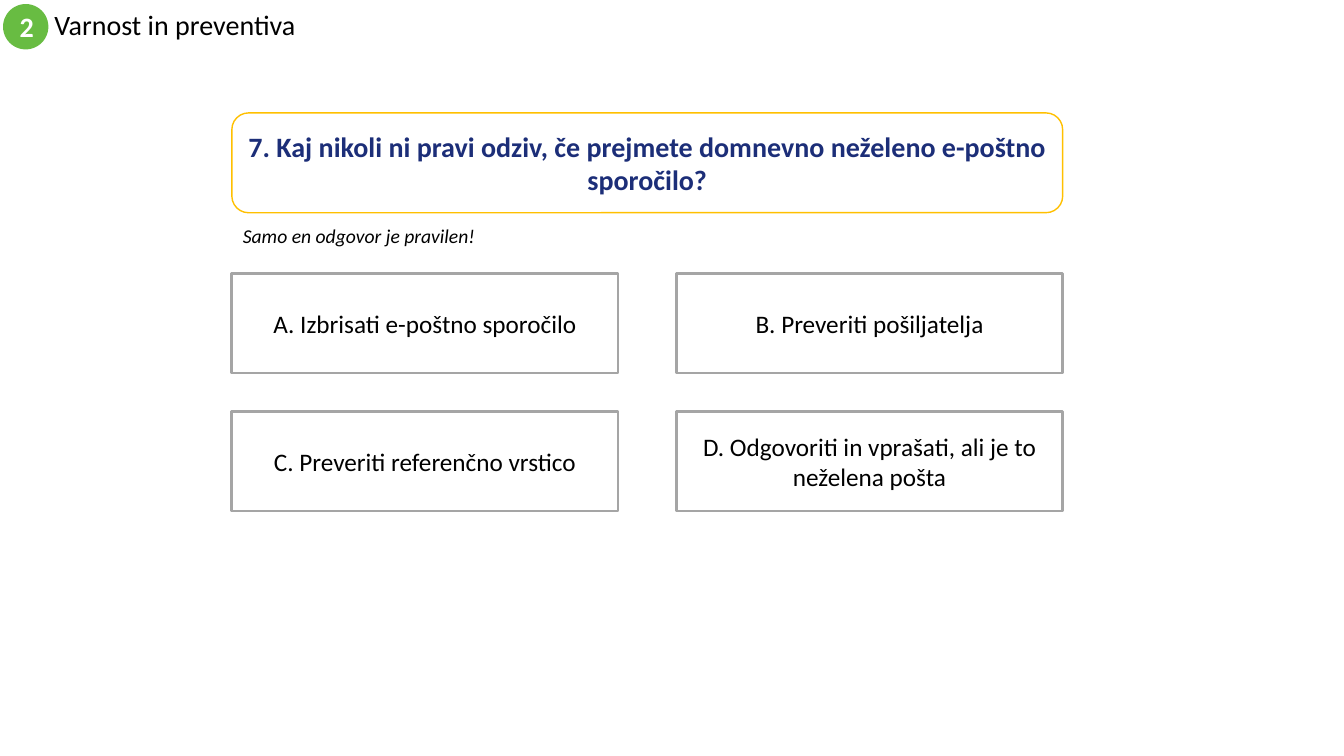
from pptx import Presentation
from pptx.dml.color import RGBColor
from pptx.enum.shapes import MSO_SHAPE as Shape
from pptx.enum.text import MSO_ANCHOR as Anchor, PP_ALIGN as Align
from pptx.util import Inches, Pt

BLACK = RGBColor(0x00, 0x00, 0x00)
WHITE = RGBColor(0xFF, 0xFF, 0xFF)
GREEN = RGBColor(0x68, 0xBC, 0x42)
NAVY = RGBColor(0x1C, 0x2E, 0x78)
GOLD = RGBColor(0xFF, 0xC0, 0x00)
GREY = RGBColor(0xA5, 0xA5, 0xA5)

LEFT, ANSWER_TOP = 2.3, 2.71
ANSWER_WIDTH, BOX_HEIGHT = 3.83, 0.99
COLUMN_STEP, ROW_STEP = 4.41, 1.37
ANSWERS = [
    "A. Izbrisati e-poštno sporočilo",
    "B. Preveriti pošiljatelja",
    "C. Preveriti referenčno vrstico",
    "D. Odgovoriti in vprašati, ali je to neželena pošta",
]


def write(box, text, size, color=BLACK, align=Align.LEFT, anchor=Anchor.MIDDLE,
          bold=False, italic=False):
    frame = box.text_frame
    frame.word_wrap = True
    frame.vertical_anchor = anchor
    para = frame.paragraphs[0]
    para.text = text
    para.alignment = align
    font = para.font
    font.name, font.size = "Calibri", Pt(size)
    font.bold, font.italic = bold, italic
    font.color.rgb = color
    return para


def add_label(page, bounds, text, size, **style):
    box = page.shapes.add_textbox(*map(Inches, bounds))
    return write(box, text, size, **style)


def add_box(page, kind, bounds, text, size, fill=WHITE, line=None, line_width=1, **style):
    """Add a filled shape with centred text, outlined only if a line colour is given."""
    box = page.shapes.add_shape(kind, *map(Inches, bounds))
    box.shadow.inherit = False
    box.fill.solid()
    box.fill.fore_color.rgb = fill
    if line is None:
        box.line.fill.background()
    else:
        box.line.color.rgb = line
        box.line.width = Pt(line_width)
    write(box, text, size, align=Align.CENTER, **style)


def add_answers(page):
    for index, answer in enumerate(ANSWERS):
        row, column = divmod(index, 2)
        bounds = (LEFT + column * COLUMN_STEP, ANSWER_TOP + row * ROW_STEP,
                  ANSWER_WIDTH, BOX_HEIGHT)
        add_box(page, Shape.RECTANGLE, bounds, answer, 18, line=GREY, line_width=2)


def main():
    deck = Presentation()
    deck.slide_width, deck.slide_height = Inches(13.33), Inches(7.5)
    page = deck.slides.add_slide(deck.slide_layouts[6])

    heading = add_label(page, (0.44, 0.04, 8, 0.45), "Varnost in preventiva", 20)
    heading.line_spacing = 0.9
    add_box(page, Shape.OVAL, (0.03, 0.04, 0.45, 0.45), "2", 20,
            fill=GREEN, color=WHITE, bold=True)
    add_box(page, Shape.ROUNDED_RECTANGLE,
            (LEFT, 1.12, COLUMN_STEP + ANSWER_WIDTH, BOX_HEIGHT),
            "7. Kaj nikoli ni pravi odziv, če prejmete domnevno neželeno e-poštno sporočilo?",
            20, line=GOLD, color=NAVY, bold=True)
    add_label(page, (2.31, 2.17, 3, 0.34), "Samo en odgovor je pravilen!", 14,
              anchor=Anchor.TOP, italic=True)
    add_answers(page)
    deck.save("out.pptx")


if __name__ == "__main__":
    main()
